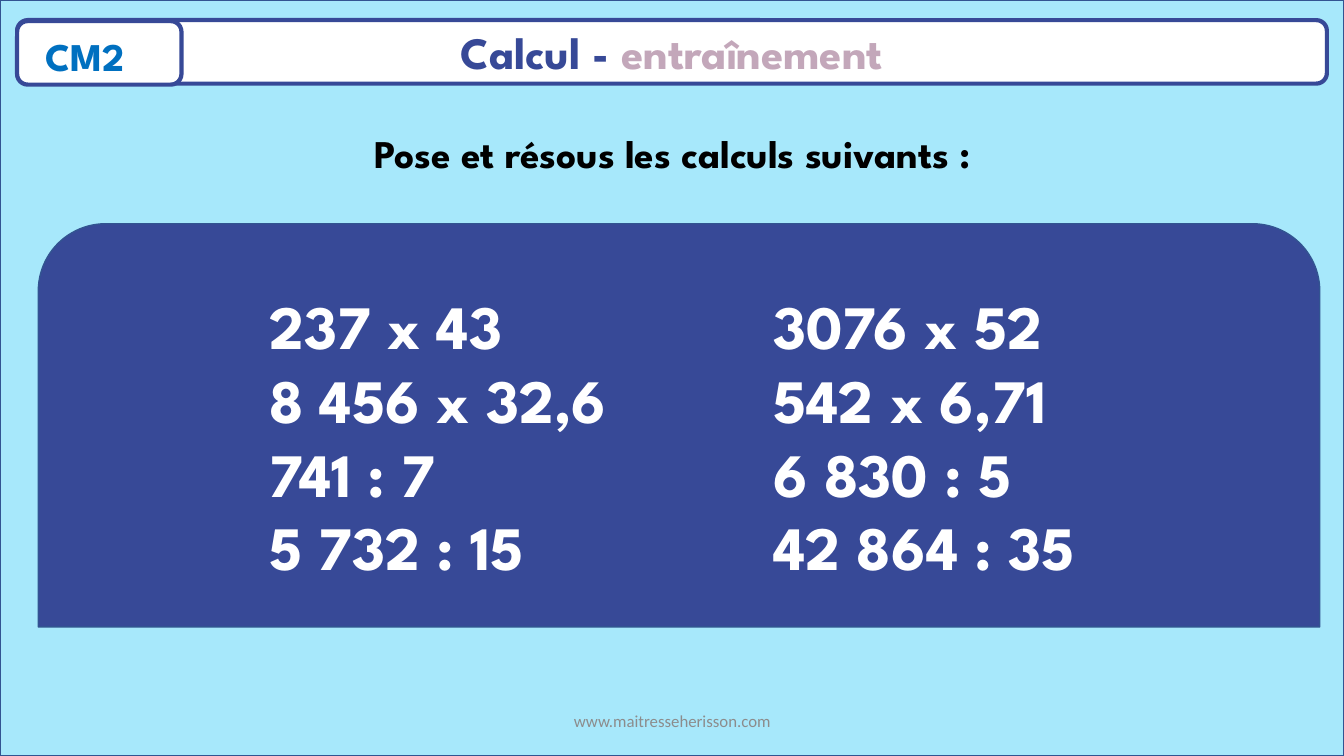
from lxml import etree
from pptx import Presentation
from pptx.dml.color import RGBColor
from pptx.enum.shapes import MSO_SHAPE
from pptx.enum.text import MSO_ANCHOR, MSO_AUTO_SIZE, PP_ALIGN
from pptx.oxml.ns import qn
from pptx.util import Inches, Pt

RECTANGLE = MSO_SHAPE.RECTANGLE
ROUNDED = MSO_SHAPE.ROUNDED_RECTANGLE
ROUNDED_TOP = MSO_SHAPE.ROUND_2_SAME_RECTANGLE
LEFT, CENTER = PP_ALIGN.LEFT, PP_ALIGN.CENTER
TOP, MIDDLE = MSO_ANCHOR.TOP, MSO_ANCHOR.MIDDLE
NO_AUTOFIT = MSO_AUTO_SIZE.NONE

HEADING_FONT = "League Spartan"
NAVY, EDGE, SKY, WHITE = "374997", "325491", "A7E8FB", "FFFFFF"
MAUVE, BLUE, BLACK, GREY = "C3A7BA", "0070C0", "000000", "8C8C8C"

CALCULATION_COLUMNS = [
    ["237 x 43", "8 456 x 32,6", "741 : 7", "5 732 : 15"],
    ["3076 x 52", "542 x 6,71", "6 830 : 5", "42 864 : 35"],
]


def color(value):
    return RGBColor.from_string(value)


def lengths(box):
    return [Inches(value) for value in box]


def place(shape, box):
    shape.left, shape.top, shape.width, shape.height = lengths(box)


def add_panel(page, kind, box, fill, line, weight):
    panel = page.shapes.add_shape(kind, *lengths(box))
    panel.shadow.inherit = False
    panel.fill.solid()
    panel.fill.fore_color.rgb = color(fill)
    panel.line.color.rgb = color(line)
    panel.line.width = Pt(weight)
    return panel


def set_frame(shape, anchor):
    frame = shape.text_frame
    frame.word_wrap = True
    frame.auto_size = NO_AUTOFIT
    frame.vertical_anchor = anchor
    return frame


def add_span(para, text, size, fill, font=HEADING_FONT, bold=True):
    span = para.add_run()
    span.text = text
    span.font.name = font
    span.font.size = Pt(size)
    span.font.bold = bold
    span.font.color.rgb = color(fill)


def add_label(page, box, text, size, fill, align=CENTER, anchor=TOP, **style):
    label = page.shapes.add_textbox(*lengths(box))
    para = set_frame(label, anchor).paragraphs[0]
    para.alignment = align
    add_span(para, text, size, fill, **style)


def add_header(page, box):
    left, top, width, height = box
    bar = add_panel(page, ROUNDED, box, WHITE, NAVY, 3)
    title = page.shapes.title
    place(title, box)
    bar.element.addnext(title.element)
    para = set_frame(title, MIDDLE).paragraphs[0]
    para.alignment = CENTER
    add_span(para, "Calcul - ", 32, NAVY)
    add_span(para, "entraînement", 32, MAUVE)
    add_panel(page, ROUNDED, (left, top + 0.01, 1.63, height), WHITE, NAVY, 3)
    add_label(page, (left + 0.18, top + 0.07, 1.26, 0.57), "CM2", 28, BLUE, LEFT)


def remove_bullet(para):
    properties = para._p.get_or_add_pPr()
    properties.set("marL", "0")
    properties.set("indent", "0")
    etree.SubElement(properties, qn("a:buNone"))


def fill_column(body, box, calculations):
    place(body, box)
    frame = set_frame(body, MIDDLE)
    for index, calculation in enumerate(calculations):
        para = frame.add_paragraph() if index else frame.paragraphs[0]
        remove_bullet(para)
        para.alignment = LEFT
        para.line_spacing = 1.0
        para.space_before = Pt(0)
        add_span(para, calculation, 44, WHITE)


def add_calculations(page, box):
    left, top, width, height = box
    last = add_panel(page, ROUNDED_TOP, box, NAVY, EDGE, 1).element
    for index, calculations in enumerate(CALCULATION_COLUMNS):
        body = page.placeholders[index + 1]
        column = (left + 2.19 + 5 * index, top + 0.2, 4.8, height - 0.2)
        fill_column(body, column, calculations)
        last.addnext(body.element)
        last = body.element


def main():
    deck = Presentation()
    deck.slide_width, deck.slide_height = Inches(13.33), Inches(7.5)
    page = deck.slides.add_slide(deck.slide_layouts[3])
    add_panel(page, RECTANGLE, (0, 0, 13.33, 7.5), SKY, EDGE, 1)
    add_label(page, (4.42, 6.95, 4.5, 0.4), "www.maitresseherisson.com", 12, GREY,
              anchor=MIDDLE, font="Calibri", bold=False)
    add_header(page, (0.17, 0.2, 12.99, 0.63))
    add_label(page, (2.21, 1.23, 8.92, 0.57), "Pose et résous les calculs suivants :", 28, BLACK)
    add_calculations(page, (0.38, 2.22, 12.71, 4))
    deck.save("out.pptx")


if __name__ == "__main__":
    main()
